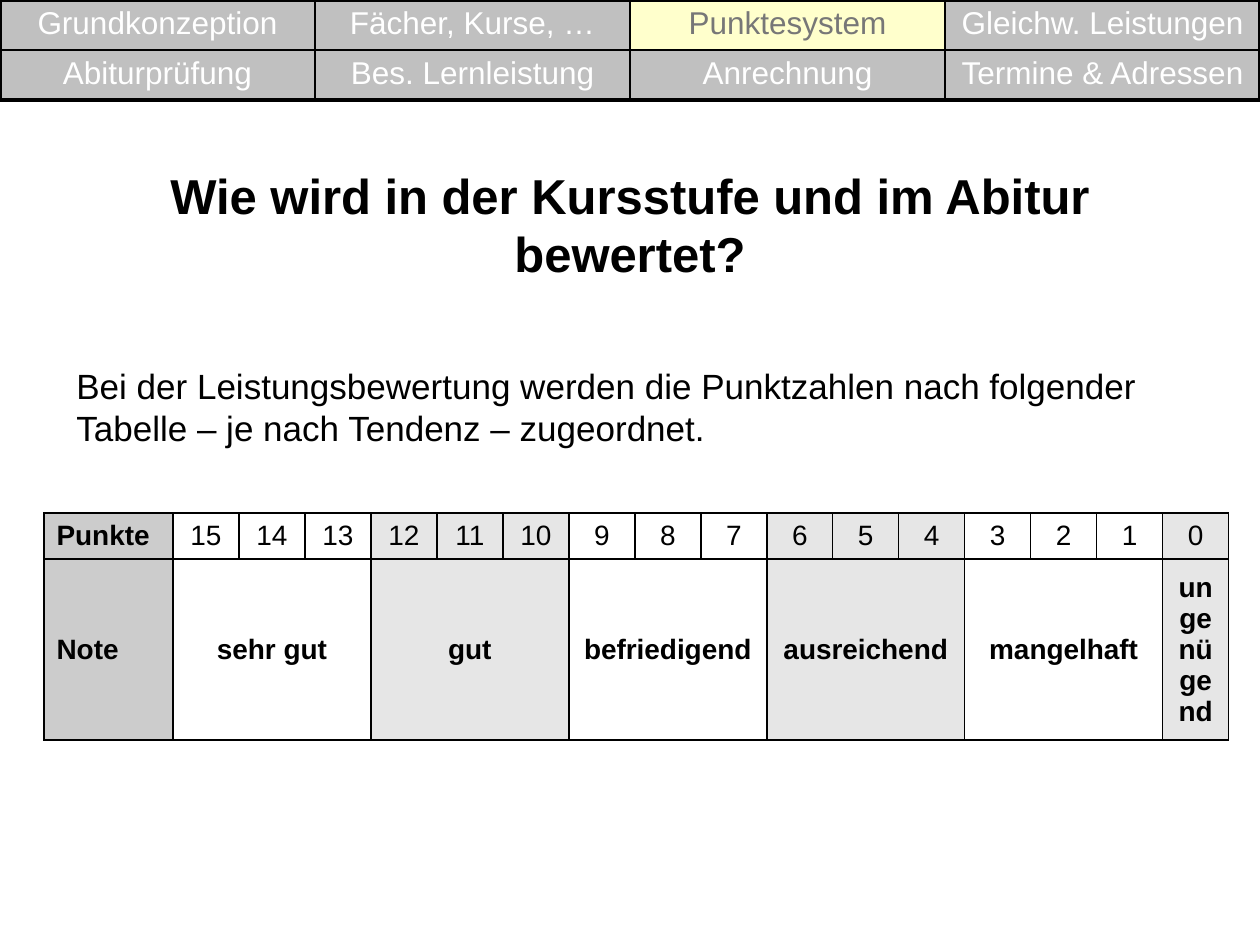
from lxml import etree
from pptx import Presentation, util as u
from pptx.dml.color import RGBColor
from pptx.enum import text
from pptx.oxml.ns import qn

PX = 914400 / 126
COLORS = {"black": "000000", "white": "FFFFFF", "gray": "C0C0C0", "dim": "777777",
          "active": "FFFFCC", "head": "CCCCCC", "band": "E6E6E6"}
MID = text.PP_ALIGN.CENTER
LEFT = text.PP_ALIGN.LEFT


def emu(px):
    return u.Emu(round(px * PX))


def rgb(name):
    return RGBColor.from_string(COLORS[name])


class Deck:
    font = "Arial"

    def __init__(self, wide, high):
        self.prs = Presentation()
        self.prs.slide_width, self.prs.slide_height = emu(wide), emu(high)
        self.slide = self.prs.slides.add_slide(self.prs.slide_layouts[6])

    def style(self, frame, words, size, color="black", bold=False, align=LEFT):
        """Put words in the frame and format them."""
        frame.text = words
        frame.word_wrap = True
        para = frame.paragraphs[0]
        para.alignment = align
        font = para.runs[0].font
        font.name, font.size, font.bold = self.font, u.Pt(size), bold
        font.color.rgb = rgb(color)

    def label(self, box, words, size, anchor=text.MSO_ANCHOR.TOP, **look):
        frame = self.slide.shapes.add_textbox(*map(emu, box)).text_frame
        self.style(frame, words, size, **look)
        frame.vertical_anchor = anchor

    def table(self, left, top, cols, rows):
        shape = self.slide.shapes.add_table(
            len(rows), len(cols), emu(left), emu(top), emu(sum(cols)), emu(sum(rows)))
        grid = shape.table
        grid.first_row = grid.horz_banding = False
        for col, wide in zip(grid.columns, cols):
            col.width = emu(wide)
        for row, high in zip(grid.rows, rows):
            row.height = emu(high)
        return grid

    def paint(self, cell, fill):
        if fill:
            cell.fill.solid()
            cell.fill.fore_color.rgb = rgb(fill)
        else:
            cell.fill.background()

    def rule(self, grid, edge=1):
        """Draw 1 pt lines around every cell, with the outer edge in its own width."""
        rows, cols = len(grid.rows), len(grid.columns)
        for r in range(rows):
            for c in range(cols):
                props = grid.cell(r, c)._tc.get_or_add_tcPr()
                outer = {"L": c == 0, "R": c == cols - 1, "T": r == 0, "B": r == rows - 1}
                for i, (side, out) in enumerate(outer.items()):
                    line = etree.Element(qn("a:ln" + side), w=str(u.Pt(edge if out else 1)))
                    fill = etree.SubElement(line, qn("a:solidFill"))
                    etree.SubElement(fill, qn("a:srgbClr"), val=COLORS["black"])
                    props.insert(i, line)


def menu(deck):
    names = [["Grundkonzeption", "Fächer, Kurse, …", "Punktesystem", "Gleichw. Leistungen"],
             ["Abiturprüfung", "Bes. Lernleistung", "Anrechnung", "Termine & Adressen"]]
    grid = deck.table(0, 0, [315] * 4, [50] * 2)
    for r, row in enumerate(names):
        for c, name in enumerate(row):
            fill, ink = ("active", "dim") if name == "Punktesystem" else ("gray", "white")
            cell = grid.cell(r, c)
            deck.style(cell.text_frame, name, 18, color=ink, align=MID)
            deck.paint(cell, fill)
    deck.rule(grid, 2.25)


def marks(deck):
    notes = ["sehr gut", "gut", "befriedigend", "ausreichend", "mangelhaft", "ungenügend"]
    grid = deck.table(44, 513, [129] + [66] * 16, [46, 181])

    def put(r, c, words, fill, bold=True, align=MID):
        cell = grid.cell(r, c)
        deck.style(cell.text_frame, words, 16, bold=bold, align=align)
        cell.vertical_anchor = text.MSO_ANCHOR.MIDDLE
        deck.paint(cell, fill)

    for r, name in enumerate(["Punkte", "Note"]):
        put(r, 0, name, "head", align=LEFT)
    for c in range(1, 17):
        group, step = divmod(c - 1, 3)
        fill = "band" if group % 2 else None
        put(0, c, str(16 - c), fill, bold=False)
        deck.paint(grid.cell(1, c), fill)
        if step == 0:
            put(1, c, notes[group], fill)
            if c < 16:
                grid.cell(1, c).merge(grid.cell(1, c + 2))
    deck.rule(grid)


def main():
    deck = Deck(1260, 945)
    menu(deck)
    deck.label((63, 174, 1134, 100), "Wie wird in der Kursstufe und im Abitur bewertet?", 28,
               anchor=text.MSO_ANCHOR.MIDDLE, bold=True, align=MID)
    marks(deck)
    deck.label((64, 358, 1132, 97), "Bei der Leistungsbewertung werden die Punktzahlen nach "
               "folgender Tabelle – je nach Tendenz – zugeordnet.", 20)
    deck.prs.save("out.pptx")


if __name__ == "__main__":
    main()
